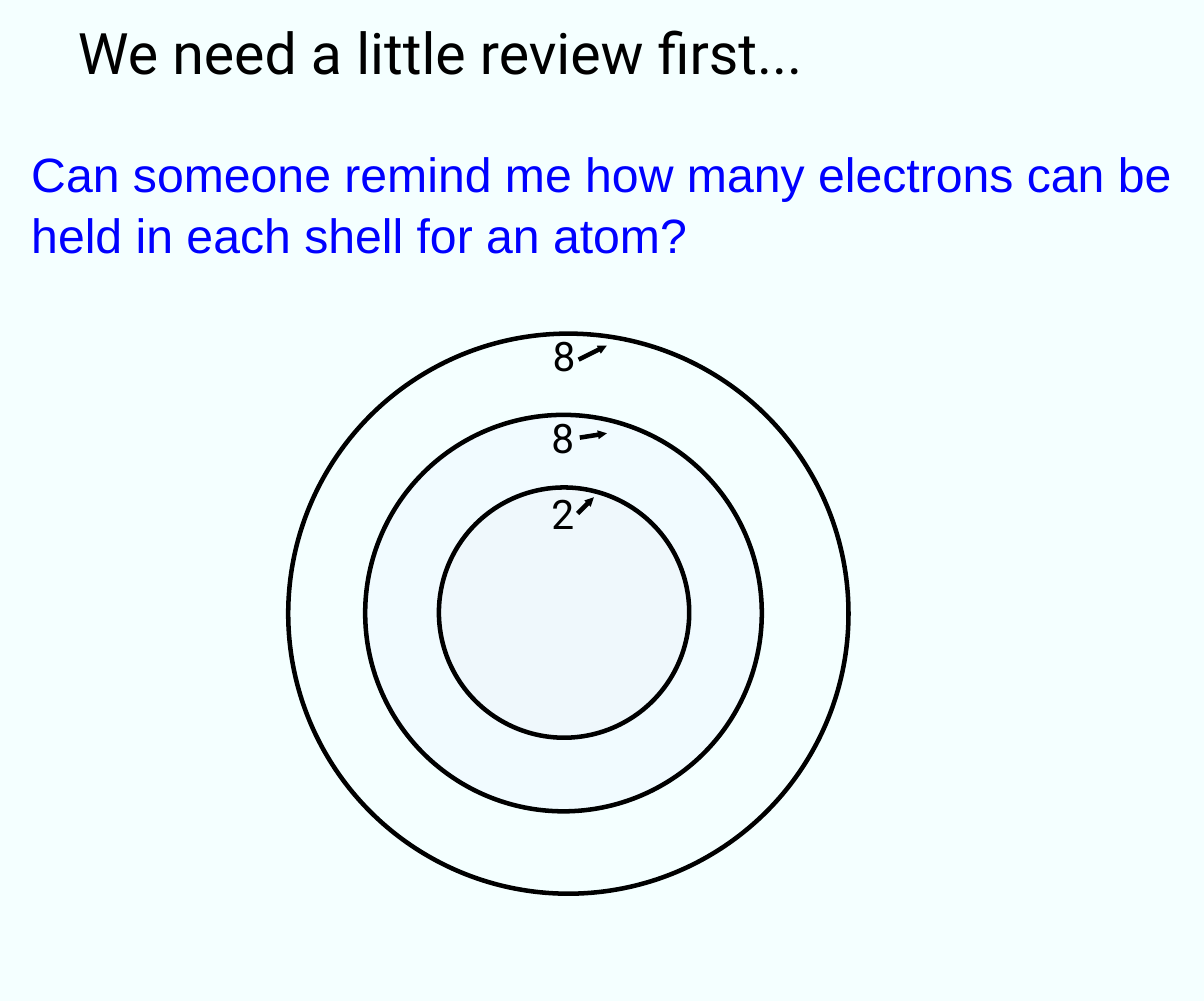
from dataclasses import dataclass

from lxml.etree import SubElement
from pptx import Presentation
from pptx.dml.color import RGBColor
from pptx.enum.shapes import MSO_CONNECTOR as Connector, MSO_SHAPE as Shape
from pptx.oxml.ns import qn
from pptx.slide import Slide
from pptx.util import Inches, Pt

BACKGROUND = RGBColor(0xF4, 0xFF, 0xFF)
MIDDLE_FILL = RGBColor(0xF1, 0xFB, 0xFF)
INNER_FILL = RGBColor(0xEF, 0xF8, 0xFC)
BLACK = RGBColor(0x00, 0x00, 0x00)
BLUE = RGBColor(0x00, 0x00, 0xFF)
LINE_WIDTH = Pt(3)


@dataclass
class Shell:
    left: float
    top: float
    diameter: float
    fill: RGBColor | None
    electrons: str
    label: tuple[float, float]
    arrow_start: tuple[float, float]
    arrow_end: tuple[float, float]


# Electron shells, from the outside in
SHELLS = [
    Shell(2.66, 3.08, 5.17, None, "8", (5, 3.01), (5.34, 3.32), (5.6, 3.19)),
    Shell(3.37, 3.83, 3.66, MIDDLE_FILL, "8", (4.99, 3.76), (5.35, 4.04), (5.6, 4)),
    Shell(4.05, 4.5, 2.31, INNER_FILL, "2", (4.99, 4.46), (5.33, 4.74), (5.48, 4.59)),
]


def add_text(slide: Slide, text: str, left: float, top: float, width: float,
             height: float, *, size: float, font: str = "Roboto",
             color: RGBColor = BLACK, line_spacing: float = 1.0) -> None:
    box = slide.shapes.add_textbox(Inches(left), Inches(top), Inches(width), Inches(height))
    box.text_frame.word_wrap = True
    paragraph = box.text_frame.paragraphs[0]
    paragraph.line_spacing = line_spacing
    run = paragraph.add_run()
    run.text = text
    run.font.name = font
    run.font.size = Pt(size)
    run.font.color.rgb = color


def add_circle(slide: Slide, shell: Shell) -> None:
    diameter = Inches(shell.diameter)
    circle = slide.shapes.add_shape(
        Shape.OVAL, Inches(shell.left), Inches(shell.top), diameter, diameter)
    circle.shadow.inherit = False
    if shell.fill is None:
        circle.fill.background()
    else:
        circle.fill.solid()
        circle.fill.fore_color.rgb = shell.fill
    circle.line.color.rgb = BLACK
    circle.line.width = LINE_WIDTH


def add_arrow(slide: Slide, start: tuple[float, float], end: tuple[float, float]) -> None:
    arrow = slide.shapes.add_connector(
        Connector.STRAIGHT, *map(Inches, start), *map(Inches, end))
    arrow.line.color.rgb = BLACK
    arrow.line.width = LINE_WIDTH
    SubElement(arrow.line._get_or_add_ln(), qn("a:tailEnd"), type="triangle", w="sm", len="sm")
    SubElement(arrow._element.spPr, qn("a:effectLst"))


def main() -> None:
    presentation = Presentation()
    presentation.slide_width = Inches(11.11)
    presentation.slide_height = Inches(9.24)
    slide = presentation.slides.add_slide(presentation.slide_layouts[6])
    slide.background.fill.solid()
    slide.background.fill.fore_color.rgb = BACKGROUND

    # Title and question
    add_text(slide, "We need a little review first...", 0.62, 0.11, 9.32, 0.74, size=38)
    add_text(slide, "Can someone remind me how many electrons can be held in each shell for an atom?",
             0.19, 1.26, 10.93, 1.18, size=32, font="Arial", color=BLUE, line_spacing=1.05)

    # Atom: circles at the back, then electron counts and arrows
    for shell in SHELLS:
        add_circle(slide, shell)
    for shell in reversed(SHELLS):
        add_text(slide, shell.electrons, *shell.label, 0.42, 0.56, size=27)
    for shell in SHELLS:
        add_arrow(slide, shell.arrow_start, shell.arrow_end)

    presentation.save("out.pptx")


if __name__ == "__main__":
    main()
